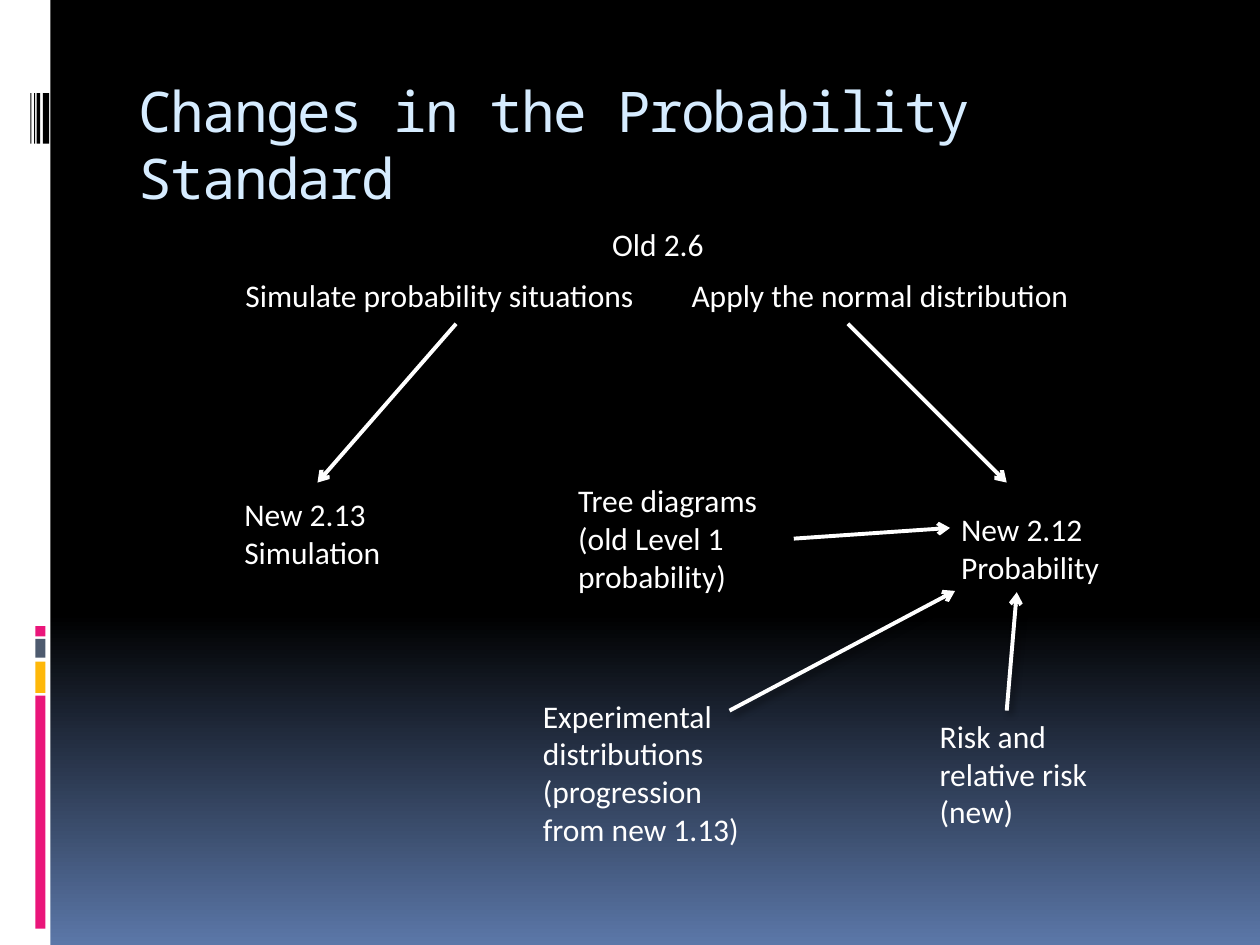
from lxml.etree import SubElement
from pptx import Presentation
from pptx.dml.color import RGBColor
from pptx.enum.shapes import MSO_CONNECTOR, MSO_SHAPE
from pptx.enum.text import MSO_ANCHOR, MSO_AUTO_SIZE
from pptx.oxml.ns import qn
from pptx.util import Inches, Pt

TITLE = "Changes in the Probability Standard"
WHITE, BLACK, PINK = "FFFFFF", "000000", "EA157A"

# Side decoration: left, top, width, height, colour
SIDE_BARS = [
    (0, 0, 0.4, 7.5, WHITE),
    (0.28, 5.52, 0.08, 1.85, PINK),
    (0.28, 5.25, 0.08, 0.25, "FEB80A"),
    (0.28, 5.07, 0.08, 0.15, "4E5B6F"),
    (0.28, 4.97, 0.08, 0.08, PINK),
] + [(left, 0.74, width, 0.4, BLACK)
     for left, width in [(0.34, 0.05), (0.29, 0.03), (0.27, 0.01), (0.24, 0.01)]]

# Topics: key -> (left, top, width, height), paragraphs
TOPICS = {
    "old": ((4.76, 1.74, 1.26, 0.4), ["Old 2.6"]),
    "simulate": ((1.85, 2.14, 3.54, 0.4), ["Simulate probability situations"]),
    "normal": ((5.39, 2.14, 3.54, 0.4), ["Apply the normal distribution"]),
    "simulation": ((1.84, 3.88, 1.59, 0.71), ["New 2.13", "Simulation"]),
    "tree": ((4.49, 3.77, 1.81, 1.01), ["Tree diagrams", "(old Level 1 probability)"]),
    "probability": ((7.53, 4, 1.57, 0.71), ["New 2.12", "Probability"]),
    "experimental": ((4.21, 5.48, 1.81, 1.31),
                     ["Experimental distributions", "(progression from new 1.13)"]),
    "risk": ((7.36, 5.64, 1.57, 1.01), ["Risk and relative risk (new)"]),
}

# Arrows: start, end, topic whose right side the arrow leaves from
ARROWS = [
    ((3.62, 2.57), (2.52, 3.83), None),
    ((6.73, 2.57), (7.99, 3.83), None),
    ((7.99, 5.64), (8.07, 4.7), None),
    ((5.79, 5.64), (7.58, 4.69), None),
    ((6.3, 4.28), (7.54, 4.19), "tree"),
]
RIGHT_SIDE = 3


def rgb(value):
    return RGBColor.from_string(value)


def add_text(slide, box, paragraphs, size, font, color, **frame_format):
    label = slide.shapes.add_textbox(*map(Inches, box))
    frame = label.text_frame
    frame.text = "\n".join(paragraphs)
    for name, value in {"word_wrap": True, **frame_format}.items():
        setattr(frame, name, value)
    for paragraph in frame.paragraphs:
        run_font = paragraph.runs[0].font
        run_font.name, run_font.size = font, Pt(size)
        run_font.color.rgb = rgb(color)
    return label


def add_arrow(slide, start, end):
    arrow = slide.shapes.add_connector(
        MSO_CONNECTOR.STRAIGHT, *map(Inches, start + end))
    arrow.line.color.rgb = rgb(WHITE)
    arrow.line.width = Pt(2.25)
    SubElement(arrow.line._get_or_add_ln(), qn("a:tailEnd"), type="arrow")
    # Soft shadow: 40 % black, 4 pt blur, 3 pt away at 45 degrees
    effects = SubElement(arrow._element.spPr, qn("a:effectLst"))
    shadow = SubElement(effects, qn("a:outerShdw"), blurRad=str(Pt(4)),
                        dist=str(Pt(3)), dir=str(45 * 60000), rotWithShape="0")
    shade = SubElement(shadow, qn("a:srgbClr"), val=BLACK)
    SubElement(shade, qn("a:alpha"), val="40000")
    return arrow


def main():
    deck = Presentation()
    deck.slide_width, deck.slide_height = Inches(10), Inches(7.5)
    slide = deck.slides.add_slide(deck.slide_layouts[6])

    # Background: black down to 65 %, then fading to blue
    backdrop = slide.background.fill
    backdrop.gradient()
    backdrop.gradient_angle = 270
    for stop, (position, color) in zip(backdrop.gradient_stops,
                                       [(0.65, BLACK), (1, "5B77A8")]):
        stop.position = position
        stop.color.rgb = rgb(color)

    # Side decoration
    for *box, color in SIDE_BARS:
        bar = slide.shapes.add_shape(MSO_SHAPE.RECTANGLE, *map(Inches, box))
        bar.shadow.inherit = False
        bar.fill.solid()
        bar.fill.fore_color.rgb = rgb(color)
        bar.line.fill.background()

    # Title, with letters set 1 pt closer
    title = add_text(slide, (1, 0.56, 8.5, 1), [TITLE], 32, "Noto Sans Mono",
                     "D6ECFF", vertical_anchor=MSO_ANCHOR.TOP)
    title.text_frame.paragraphs[0].runs[0].font._element.set("spc", "-100")

    # Topics
    labels = {
        key: add_text(slide, box, paragraphs, 18, "Calibri", WHITE,
                      auto_size=MSO_AUTO_SIZE.SHAPE_TO_FIT_TEXT)
        for key, (box, paragraphs) in TOPICS.items()
    }

    # Arrows
    for start, end, source in ARROWS:
        arrow = add_arrow(slide, start, end)
        if source:
            arrow.begin_connect(labels[source], RIGHT_SIDE)

    deck.save("out.pptx")


if __name__ == "__main__":
    main()
